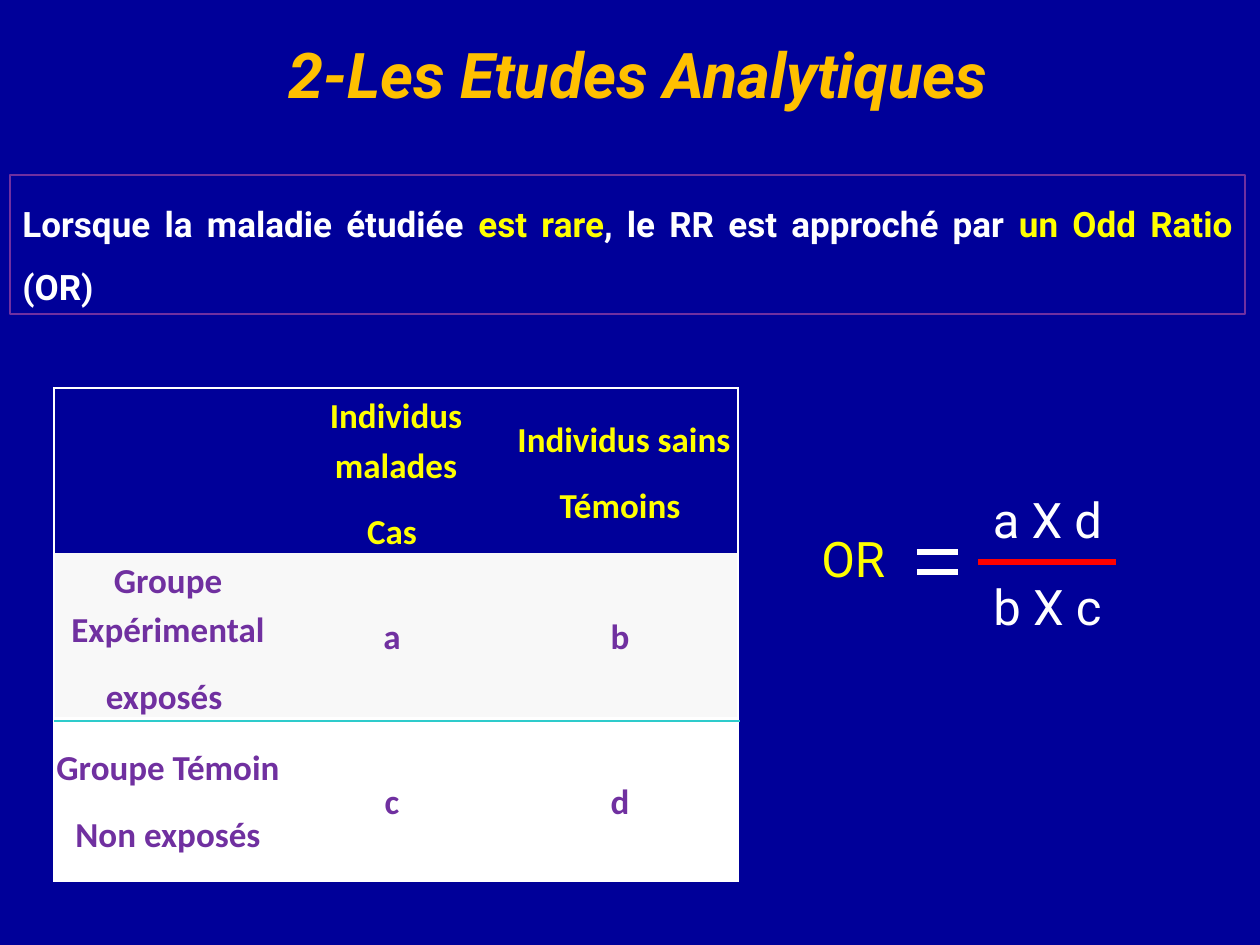
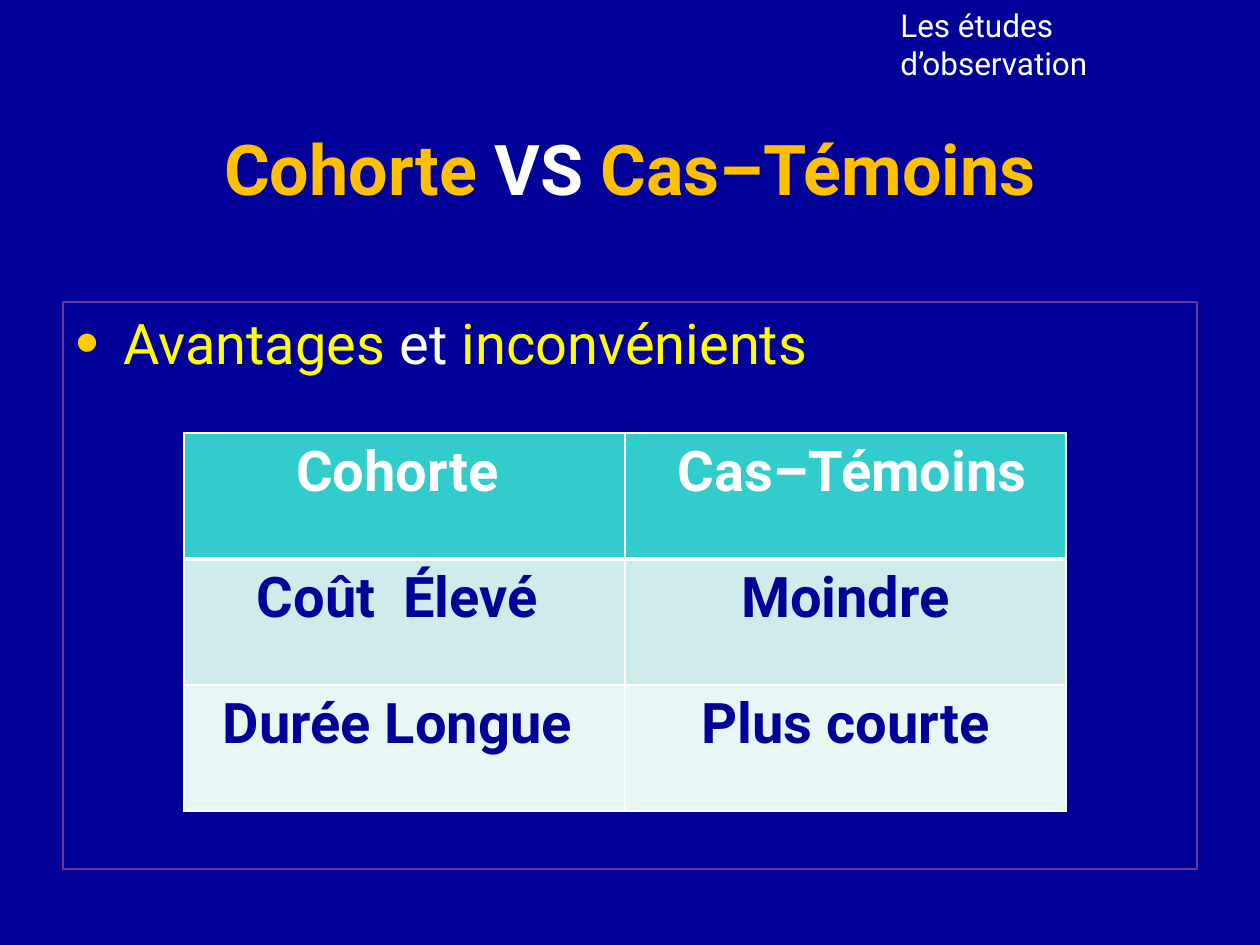
from lxml.etree import SubElement
from pptx import Presentation
from pptx.dml.color import RGBColor
from pptx.enum.shapes import MSO_CONNECTOR
from pptx.enum.text import MSO_ANCHOR, PP_ALIGN
from pptx.oxml.ns import qn
from pptx.util import Emu, Pt

NAVY, WHITE, YELLOW, GOLD = "000099", "FFFFFF", "FFFF00", "FFC000"
PURPLE, RED, TURQUOISE, INK = "7030A0", "FF0000", "33CCCC", "010199"

TITLE = {"name": "Roboto", "bold": True}
STUDY_TITLE = TITLE | {"size": Pt(36), "italic": True}
VERSUS_TITLE = TITLE | {"size": Pt(40)}
STATEMENT = {"name": "Roboto", "size": Pt(20), "bold": True}
FORMULA = {"name": "Roboto", "size": Pt(28)}
BULLET = {"name": "Roboto", "size": Pt(32)}
HEADER_NOTE = {"name": "Roboto", "size": Pt(18)}
RISK_CELL = {"name": "Calibri", "size": Pt(20), "bold": True}
COMPARISON_CELL = BULLET | {"bold": True}

CENTER = {"alignment": PP_ALIGN.CENTER}
JUSTIFIED = {"alignment": PP_ALIGN.JUSTIFY, "line_spacing": 1.5}
RISK_PARAGRAPH = CENTER | {"line_spacing": 1.15, "space_after": Pt(10)}

STUDY_HEADING = [("2-Les Etudes Analytiques", GOLD)]
RARE_DISEASE = [
    ("Lorsque la maladie étudiée ", WHITE),
    ("est rare", YELLOW),
    (", le RR est approché par ", WHITE),
    ("un Odd Ratio ", YELLOW),
    ("(OR)", WHITE),
]
RISK_ROWS = [
    [[], ["Individus malades", "Cas "], ["Individus sains", "Témoins "]],
    [["Groupe Expérimental", "exposés "], ["a "], ["b "]],
    [["Groupe Témoin", "Non exposés"], ["c "], ["d "]],
]
RISK_STYLES = [(None, YELLOW), ("F8F8F8", PURPLE), (WHITE, PURPLE)]
FORMULA_TERMS = [
    ("OR", YELLOW, (809, 522, 100, 72), {}),
    ("a X d", WHITE, (958, 483, 179, 72), CENTER),
    ("b X c", WHITE, (958, 570, 179, 72), CENTER),
]
FORMULA_LINES = [
    (978, 1116, 562, RED, 3),
    (917, 958, 552, WHITE, 3),
    (917, 958, 572, WHITE, 3),
    (54, 740, 721, "2ECBCB", 0.75),
]

VERSUS_HEADING = [("Cohorte", GOLD), (" VS ", WHITE), ("Cas–Témoins", GOLD)]
ADVANTAGES = [("Avantages ", YELLOW), ("et ", WHITE), ("inconvénients", YELLOW)]
COMPARISON_ROWS = [
    [["Cohorte "], [" Cas–Témoins"]],
    [["Coût  Élevé "], ["Moindre"]],
    [["Durée Longue "], ["Plus courte"]],
]
COMPARISON_STYLES = [(TURQUOISE, WHITE), ("CEECEC", INK), ("E8F6F6", INK)]


def px(length):
    return Emu(round(length * 914400 / 126))


def color(value):
    return RGBColor.from_string(value)


def apply(target, values):
    for name, value in values.items():
        setattr(target, name, value)


def write(paragraph, runs, font, layout):
    apply(paragraph, layout)
    for text, run_color in runs:
        run = paragraph.add_run()
        run.text = text
        apply(run.font, font)
        run.font.color.rgb = color(run_color)


def add_text(slide, box, runs, font, layout, anchor=MSO_ANCHOR.TOP, outline=None):
    shape = slide.shapes.add_textbox(*map(px, box))
    apply(shape.text_frame, {"word_wrap": True, "vertical_anchor": anchor})
    if outline:
        shape.line.color.rgb = color(outline)
        shape.line.width = Pt(0.75)
    paragraph = shape.text_frame.paragraphs[0]
    write(paragraph, runs, font, layout)
    return paragraph


def add_bullet(paragraph, indent, bullet_color):
    properties = paragraph._p.get_or_add_pPr()
    properties.set("marL", str(px(indent)))
    properties.set("indent", str(-px(indent)))
    fill = SubElement(properties, qn("a:buClr"))
    SubElement(fill, qn("a:srgbClr"), val=bullet_color)
    SubElement(properties, qn("a:buSzPct"), val="120000")
    SubElement(properties, qn("a:buFont"), typeface="Arial")
    SubElement(properties, qn("a:buChar"), char="•")


def add_line(slide, left, right, y, line_color, width):
    connector = slide.shapes.add_connector(
        MSO_CONNECTOR.STRAIGHT, px(left), px(y), px(right), px(y))
    connector.line.color.rgb = color(line_color)
    connector.line.width = Pt(width)
    SubElement(connector._element.spPr, qn("a:effectLst"))


def set_borders(cell, widths):
    properties = cell._tc.get_or_add_tcPr()
    for side, width in zip("LRTB", widths):
        line = SubElement(properties, qn(f"a:ln{side}"), w=str(Pt(width)))
        if width:
            fill = SubElement(line, qn("a:solidFill"))
            SubElement(fill, qn("a:srgbClr"), val=WHITE)
        else:
            SubElement(line, qn("a:noFill"))


def frame_borders(row, column, last_row, last_column):
    return column == 0, column == last_column, row == 0, row == last_row


def grid_borders(row, column, last_row, last_column):
    return 1, 1, 3 if row == 1 else 1, 3 if row == 0 else 1


def add_grid(slide, corner, cell_size, rows, styles, borders, font, layout, cell_format):
    row_count, column_count = len(rows), len(rows[0])
    width, height = cell_size
    table = slide.shapes.add_table(
        row_count, column_count, *map(px, corner),
        px(width * column_count), px(height * row_count)).table
    apply(table, {"first_row": False, "horz_banding": False})
    for row, (texts, (fill, text_color)) in enumerate(zip(rows, styles)):
        for column, lines in enumerate(texts):
            cell = table.cell(row, column)
            apply(cell, cell_format)
            set_borders(cell, borders(row, column, row_count - 1, column_count - 1))
            if fill:
                cell.fill.solid()
                cell.fill.fore_color.rgb = color(fill)
            else:
                cell.fill.background()
            for number, text in enumerate(lines):
                frame = cell.text_frame
                paragraph = frame.add_paragraph() if number else frame.paragraphs[0]
                write(paragraph, [(text, text_color)], font, layout)


def build_odds_ratio(slide):
    add_text(slide, (139, 29, 998, 158), STUDY_HEADING, STUDY_TITLE, CENTER)
    add_text(slide, (10, 175, 1235, 139), RARE_DISEASE, STATEMENT, JUSTIFIED, outline=PURPLE)
    margins = ("margin_left", "margin_right", "margin_top", "margin_bottom")
    cell_format = dict.fromkeys(margins, px(1)) | {"vertical_anchor": MSO_ANCHOR.MIDDLE}
    add_grid(slide, (54, 388), (228, 164), RISK_ROWS, RISK_STYLES,
             frame_borders, RISK_CELL, RISK_PARAGRAPH, cell_format)
    for text, text_color, box, layout in FORMULA_TERMS:
        add_text(slide, box, [(text, text_color)], FORMULA, layout)
    for line in FORMULA_LINES:
        add_line(slide, *line)


def build_comparison(slide):
    add_text(slide, (63, 73, 1134, 190), VERSUS_HEADING, VERSUS_TITLE, CENTER, MSO_ANCHOR.MIDDLE)
    advantages = add_text(slide, (63, 302, 1134, 567), ADVANTAGES, BULLET, {}, outline=PURPLE)
    add_bullet(advantages, 48, "FFCC00")
    add_text(slide, (888, 0, 350, 88), [("Les études d’observation", WHITE)], HEADER_NOTE, {})
    add_grid(slide, (184, 433), (441, 126), COMPARISON_ROWS, COMPARISON_STYLES,
             grid_borders, COMPARISON_CELL, CENTER, {})


def main():
    presentation = Presentation()
    apply(presentation, {"slide_width": px(1260), "slide_height": px(945)})
    background = presentation.slide_master.background.fill
    background.solid()
    background.fore_color.rgb = color(NAVY)
    for build in (build_odds_ratio, build_comparison):
        build(presentation.slides.add_slide(presentation.slide_layouts[6]))
    presentation.save("out.pptx")


if __name__ == "__main__":
    main()
